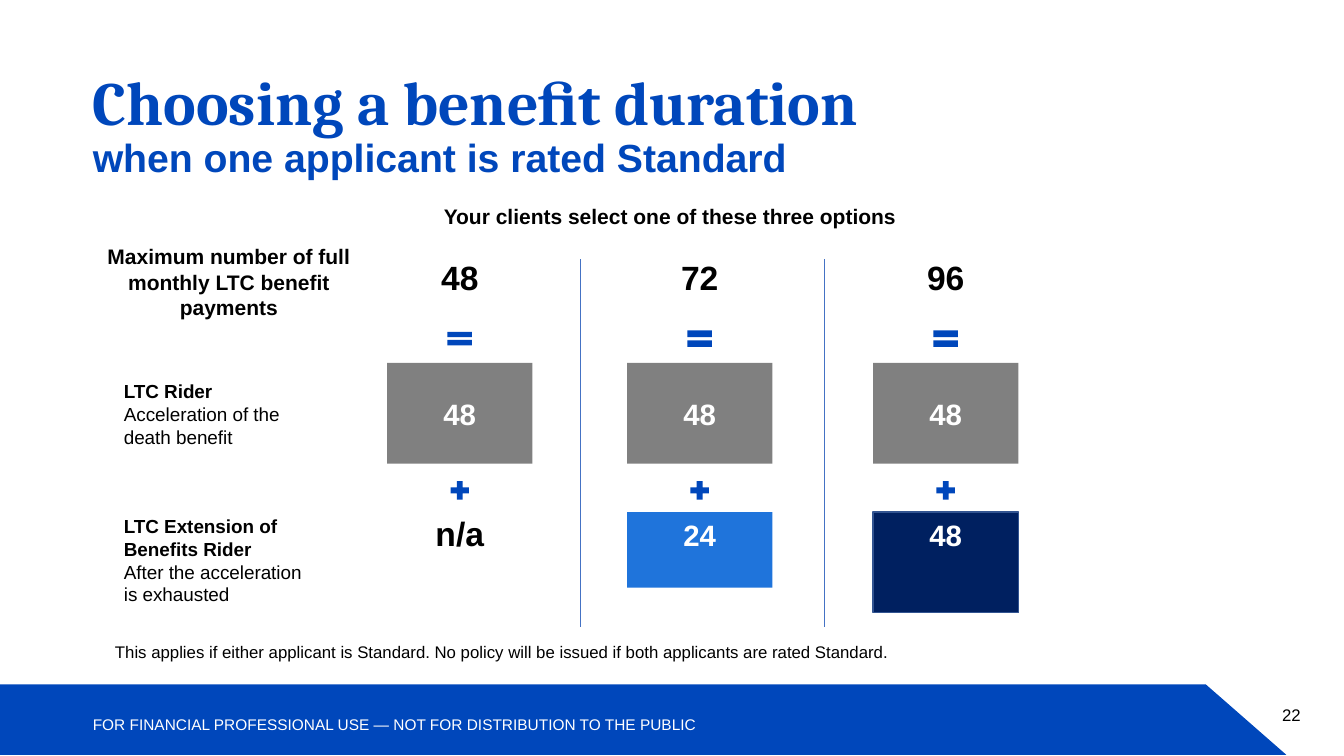
from pptx import Presentation
from pptx.dml.color import RGBColor
from pptx.enum.shapes import MSO_CONNECTOR, MSO_SHAPE
from pptx.enum.text import MSO_ANCHOR, MSO_AUTO_SIZE, PP_ALIGN
from pptx.oxml.ns import qn
from pptx.util import Inches, Pt

LEFT, CENTER, RIGHT = PP_ALIGN.LEFT, PP_ALIGN.CENTER, PP_ALIGN.RIGHT
TOP, MIDDLE = MSO_ANCHOR.TOP, MSO_ANCHOR.MIDDLE
RECTANGLE, TRIANGLE = MSO_SHAPE.RECTANGLE, MSO_SHAPE.RIGHT_TRIANGLE
PLUS, EQUAL = MSO_SHAPE.MATH_PLUS, MSO_SHAPE.MATH_EQUAL

WIDTH, HEIGHT = 13.33, 7.5
BLUE, WHITE, BLACK, GRAY = "0047BB", "FFFFFF", "000000", "808080"
MARGIN = 0.92
BAND_TOP, BAND_WIDTH, BAND_HEIGHT, CORNER = 6.79, 11.96, 0.7, 0.8
BOX_WIDTH, BOX_HEIGHT = 1.44, 1
TOTAL_TOP, EQUAL_MIDDLE, RIDER_TOP, PLUS_TOP, EXTENSION_TOP = 2.5, 3.36, 3.6, 4.74, 5.08
DIVIDER_TOP, DIVIDER_BOTTOM = 2.57, 6.22
DIVIDERS = (5.76, 8.18)
PLUS_SIZE, EQUAL_WIDTH = 0.25, 0.33

TITLE = [("Choosing a beneﬁt duration", 44, "Cambria"),
         ("when one applicant is rated Standard", 28, "Arial")]
OPTIONS = [
    {"center": 4.56, "total": "48", "rider": "48", "equal": 0.23,
     "extension": "n/a", "share": 0, "fill": None, "line": None},
    {"center": 6.94, "total": "72", "rider": "48", "equal": 0.28,
     "extension": "24", "share": 0.75, "fill": "1F74DB", "line": None},
    {"center": 9.38, "total": "96", "rider": "48", "equal": 0.28,
     "extension": "48", "share": 1, "fill": "002060", "line": "325491"},
]
TEXTS = [
    ((12.1, 6.95, 0.9, 0.29), [("22", False)],
     {"size": 12, "align": RIGHT, "anchor": MIDDLE}),
    ((MARGIN, 7.09, 9.51, 0.19),
     [("FOR FINANCIAL PROFESSIONAL USE — NOT FOR DISTRIBUTION TO THE PUBLIC", False)],
     {"size": 11, "color": WHITE, "inset": False}),
    ((3.85, 1.97, 5.59, 0.35),
     [("Your clients select one of these three options", True)],
     {"size": 15, "align": CENTER}),
    ((0.95, 2.37, 2.64, 0.86),
     [("Maximum number of full monthly LTC benefit payments", True)],
     {"size": 15, "align": CENTER}),
    ((1.13, 3.72, 2.19, 0.78),
     [("LTC Rider", True), ("Acceleration of the death benefit", False)],
     {"size": 13.5}),
    ((1.13, 5.06, 1.99, 1.01),
     [("LTC Extension of Benefits Rider", True),
      ("After the acceleration is exhausted", False)],
     {"size": 13.5}),
    ((1.14, 6.34, 7.82, 0.4),
     [("This applies if either applicant is Standard. "
       "No policy will be issued if both applicants are rated Standard.", False)],
     {"size": 12, "inset": False, "wrap": False, "spacing": 1.12}),
]


def rgb(value):
    return RGBColor.from_string(value)


def style(span, size, color, bold, name="Arial"):
    for key, value in {"size": Pt(size), "bold": bold, "name": name}.items():
        setattr(span.font, key, value)
    span.font.color.rgb = rgb(color)


def set_frame(frame, anchor=TOP, wrap=True, inset=True):
    values = {"vertical_anchor": anchor, "word_wrap": wrap,
              "auto_size": MSO_AUTO_SIZE.NONE}
    if not inset:
        values.update(dict.fromkeys(
            ("margin_left", "margin_top", "margin_right", "margin_bottom"), 0))
    for key, value in values.items():
        setattr(frame, key, value)


def write(frame, lines, size, color=BLACK, align=LEFT, spacing=None, **layout):
    set_frame(frame, **layout)
    for index, (text, bold) in enumerate(lines):
        para = frame.add_paragraph() if index else frame.paragraphs[0]
        para.alignment, para.line_spacing = align, spacing
        span = para.add_run()
        span.text = text
        style(span, size, color, bold)


def add_text(page, place, lines, **look):
    box = page.shapes.add_textbox(*map(Inches, place))
    write(box.text_frame, lines, **look)


def add_block(page, kind, place, fill=BLUE, line=None):
    shape = page.shapes.add_shape(kind, *map(Inches, place))
    shape.shadow.inherit = False
    shape.fill.solid()
    shape.fill.fore_color.rgb = rgb(fill)
    if line:
        shape.line.color.rgb, shape.line.width = rgb(line), Pt(1)
    else:
        shape.line.fill.background()
    return shape


def add_value_box(page, center, top, height, text, fill, line=None, anchor=TOP):
    place = (center - BOX_WIDTH / 2, top, BOX_WIDTH, height)
    shape = add_block(page, RECTANGLE, place, fill, line)
    write(shape.text_frame, [(text, True)], 21, WHITE, CENTER, anchor=anchor)


def add_figure(page, center, top, text, width=0.58):
    add_text(page, (center - width / 2, top, width, 0.5), [(text, True)],
             size=24, align=CENTER, wrap=False)


def add_title(page):
    title = page.shapes.title
    place = (MARGIN, 0.72, 11.6, 1.09)
    for key, value in zip(("left", "top", "width", "height"), place):
        setattr(title, key, Inches(value))
    set_frame(title.text_frame, inset=False)
    para = title.text_frame.paragraphs[0]
    para.alignment, para.line_spacing = LEFT, 0.9
    for index, (text, size, name) in enumerate(TITLE):
        if index:
            para.add_line_break()
        span = para.add_run()
        span.text = text
        style(span, size, BLUE, True, name)


def add_option(page, option):
    center = option["center"]
    add_figure(page, center, TOTAL_TOP, option["total"])
    add_block(page, EQUAL, (center - EQUAL_WIDTH / 2, EQUAL_MIDDLE - option["equal"] / 2,
                            EQUAL_WIDTH, option["equal"]))
    add_value_box(page, center, RIDER_TOP, BOX_HEIGHT, option["rider"], GRAY, anchor=MIDDLE)
    add_block(page, PLUS, (center - PLUS_SIZE / 2, PLUS_TOP, PLUS_SIZE, PLUS_SIZE))
    if option["fill"]:
        add_value_box(page, center, EXTENSION_TOP, option["share"] * BOX_HEIGHT,
                      option["extension"], option["fill"], option["line"])
    else:
        add_figure(page, center, EXTENSION_TOP - 0.04, option["extension"], 0.69)


def add_divider(page, x):
    line = page.shapes.add_connector(
        MSO_CONNECTOR.STRAIGHT, *map(Inches, (x, DIVIDER_TOP, x, DIVIDER_BOTTOM)))
    line.line.color.rgb, line.line.width = rgb("4472C4"), Pt(0.5)
    properties = line._element.spPr
    properties.append(properties.makeelement(qn("a:effectLst"), {}))


def main():
    deck = Presentation()
    deck.slide_width, deck.slide_height = Inches(WIDTH), Inches(HEIGHT)
    page = deck.slides.add_slide(deck.slide_layouts[5])
    add_title(page)
    add_block(page, RECTANGLE, (0, BAND_TOP, BAND_WIDTH, BAND_HEIGHT))
    add_block(page, TRIANGLE, (BAND_WIDTH, BAND_TOP, CORNER, BAND_HEIGHT))
    for place, lines, look in TEXTS:
        add_text(page, place, lines, **look)
    for x in DIVIDERS:
        add_divider(page, x)
    for option in OPTIONS:
        add_option(page, option)
    deck.save("out.pptx")


if __name__ == "__main__":
    main()
